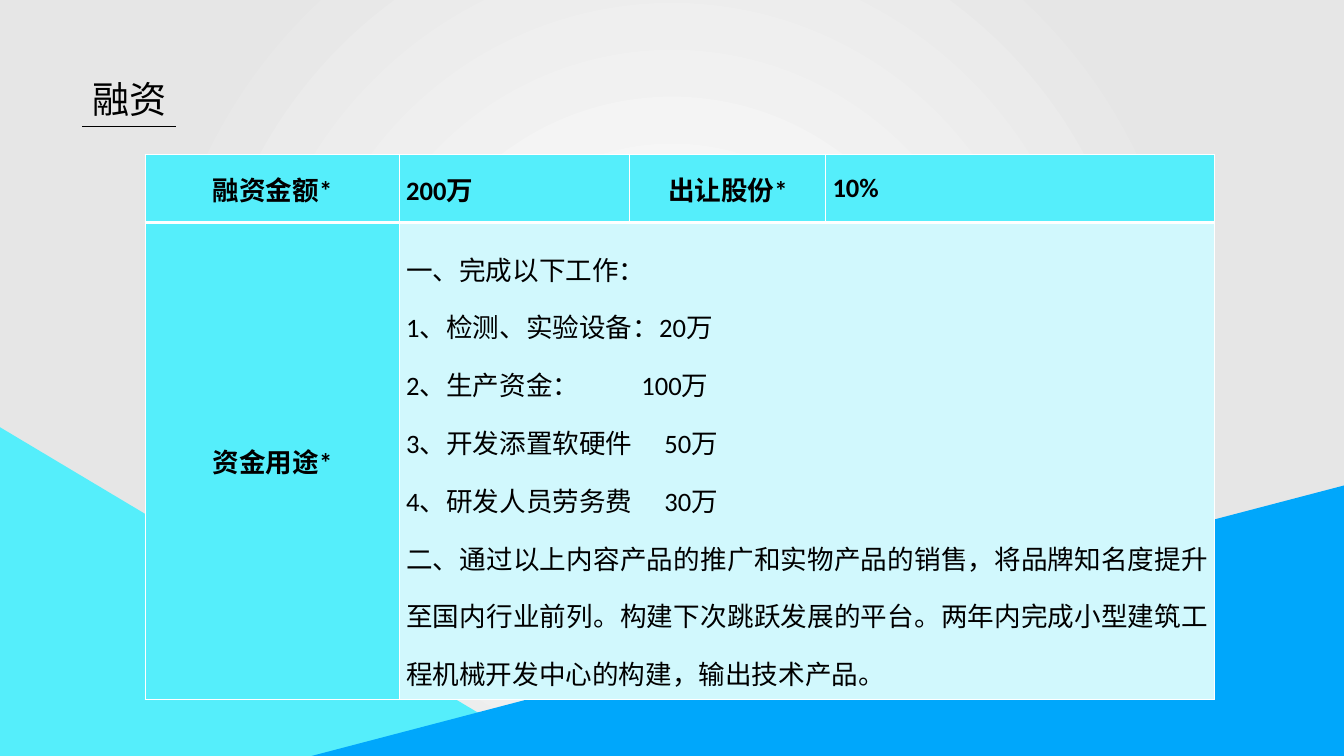
from dataclasses import dataclass

from lxml.etree import SubElement
from pptx import Presentation
from pptx.dml.color import RGBColor
from pptx.enum.shapes import MSO_CONNECTOR, MSO_SHAPE
from pptx.enum.text import MSO_ANCHOR, MSO_AUTO_SIZE, PP_ALIGN
from pptx.oxml.ns import qn
from pptx.util import Inches, Pt


@dataclass(frozen=True)
class Theme:
    black: RGBColor = RGBColor(0x00, 0x00, 0x00)
    white: RGBColor = RGBColor(0xFF, 0xFF, 0xFF)
    grey: RGBColor = RGBColor(0xE6, 0xE6, 0xE6)
    cyan: RGBColor = RGBColor(0x55, 0xEE, 0xFB)
    pale_cyan: RGBColor = RGBColor(0xD1, 0xF8, 0xFD)
    blue: RGBColor = RGBColor(0x00, 0xA7, 0xFB)
    title_font: str = "Arial"
    table_font: str = "Calibri"
    title_size: Pt = Pt(28)
    table_size: Pt = Pt(20)


theme = Theme()
WIDTH, HEIGHT = 14.06, 7.91


def set_font(para, name, size, bold):
    para.font.name = name
    para.font.size = size
    para.font.bold = bold
    para.font.color.rgb = theme.black


def add_border(cell, side, points):
    properties = cell._tc.get_or_add_tcPr()
    line = SubElement(properties, qn(f"a:ln{side}"), w=str(Pt(points)))
    fill = SubElement(line, qn("a:solidFill"))
    SubElement(fill, qn("a:srgbClr"), val=str(theme.white))


deck = Presentation()
deck.slide_width, deck.slide_height = Inches(WIDTH), Inches(HEIGHT)
page = deck.slides.add_slide(deck.slide_layouts[5])

# Backdrop with a radial gradient, behind the title
backdrop = page.shapes.add_shape(
    MSO_SHAPE.RECTANGLE, 0, 0, deck.slide_width, deck.slide_height)
backdrop.shadow.inherit = False
backdrop.line.fill.background()
backdrop.fill.gradient()
stops = zip(backdrop.fill.gradient_stops, (theme.white, theme.grey), (0, 0.73))
for stop, color, position in stops:
    stop.color.rgb = color
    stop.position = position
gradient = backdrop._element.spPr.find(qn("a:gradFill"))
gradient.remove(gradient.find(qn("a:lin")))
radial = SubElement(gradient, qn("a:path"), path="circle")
SubElement(radial, qn("a:fillToRect"), l="50000", t="50000", r="50000", b="50000")
page.shapes._spTree.insert(2, backdrop._element)

# Title and its underline
title = page.shapes.title
title.left, title.top = Inches(0.86), Inches(0.75)
title.width, title.height = Inches(0.98), Inches(0.57)
frame = title.text_frame
frame.text = "融资"
frame.word_wrap = False
frame.auto_size = MSO_AUTO_SIZE.SHAPE_TO_FIT_TEXT
frame.vertical_anchor = MSO_ANCHOR.TOP
frame.paragraphs[0].alignment = PP_ALIGN.RIGHT
set_font(frame.paragraphs[0], theme.title_font, theme.title_size, False)

underline = page.shapes.add_connector(
    MSO_CONNECTOR.STRAIGHT, Inches(0.86), Inches(1.32), Inches(1.84), Inches(1.32))
underline.line.color.rgb = theme.black
underline.line.width = Pt(0.5)
SubElement(underline._element.spPr, qn("a:effectLst"))

# Corner triangles
triangles = [
    (theme.cyan, [(0, 4.47), (5.76, HEIGHT), (0, HEIGHT)]),
    (theme.blue, [(WIDTH, 5.08), (WIDTH, HEIGHT), (3.26, HEIGHT)]),
]
for color, corners in triangles:
    points = [(Inches(x), Inches(y)) for x, y in corners]
    builder = page.shapes.build_freeform(*points[0])
    builder.add_line_segments(points[1:], close=True)
    triangle = builder.convert_to_shape()
    triangle.shadow.inherit = False
    triangle.fill.solid()
    triangle.fill.fore_color.rgb = color
    triangle.line.fill.background()

# Funding table
column_widths = (2.66, 2.41, 2.05, 4.07)
row_heights = (0.71, 4.99)
table = page.shapes.add_table(
    2, 4, Inches(1.52), Inches(1.62), Inches(11.18), Inches(5.7)).table
for column, width in zip(table.columns, column_widths):
    column.width = Inches(width)
for row, height in zip(table.rows, row_heights):
    row.height = Inches(height)

for index, row in enumerate(table.rows):
    for cell in row.cells:
        for side, points in zip("LRTB", (1, 1, 3, 1) if index else (1, 1, 1, 3)):
            add_border(cell, side, points)
        cell.fill.solid()
        cell.fill.fore_color.rgb = theme.cyan
        cell.vertical_anchor = MSO_ANCHOR.MIDDLE
        cell.margin_left = cell.margin_right = Inches(0.07)
        cell.margin_top = cell.margin_bottom = 0

labels = [
    (0, 0, "融资金额*", PP_ALIGN.CENTER),
    (0, 1, "200万", PP_ALIGN.JUSTIFY),
    (0, 2, "出让股份*", PP_ALIGN.CENTER),
    (0, 3, "10%", PP_ALIGN.JUSTIFY),
    (1, 0, "资金用途*", PP_ALIGN.CENTER),
]
for row_index, column_index, text, alignment in labels:
    cell = table.cell(row_index, column_index)
    cell.text = text
    para = cell.text_frame.paragraphs[0]
    para.alignment = alignment
    set_font(para, theme.table_font, theme.table_size, True)

# Uses of the funds, each with the tab stop of its amount in inches
uses = [
    ("一、完成以下工作：", None),
    ("1、检测、实验设备：20万", None),
    ("2、生产资金：\t100万", 2.46),
    ("3、开发添置软硬件\t50万", 2.7),
    ("4、研发人员劳务费\t30万", 2.7),
    ("二、通过以上内容产品的推广和实物产品的销售，将品牌知名度提升至国内行业前列。"
     "构建下次跳跃发展的平台。两年内完成小型建筑工程机械开发中心的构建，输出技术产品。", None),
]
uses_cell = table.cell(1, 1)
uses_cell.merge(table.cell(1, 3))
uses_cell.fill.fore_color.rgb = theme.pale_cyan
uses_cell.text = "\n".join(text for text, _ in uses)
for para, (_, tab) in zip(uses_cell.text_frame.paragraphs, uses):
    if tab:
        tabs = SubElement(para._p.get_or_add_pPr(), qn("a:tabLst"))
        SubElement(tabs, qn("a:tab"), pos=str(Inches(tab)), algn="l")
    para.alignment = PP_ALIGN.JUSTIFY
    para.line_spacing = 1.5
    set_font(para, theme.table_font, theme.table_size, False)

deck.save("out.pptx")
